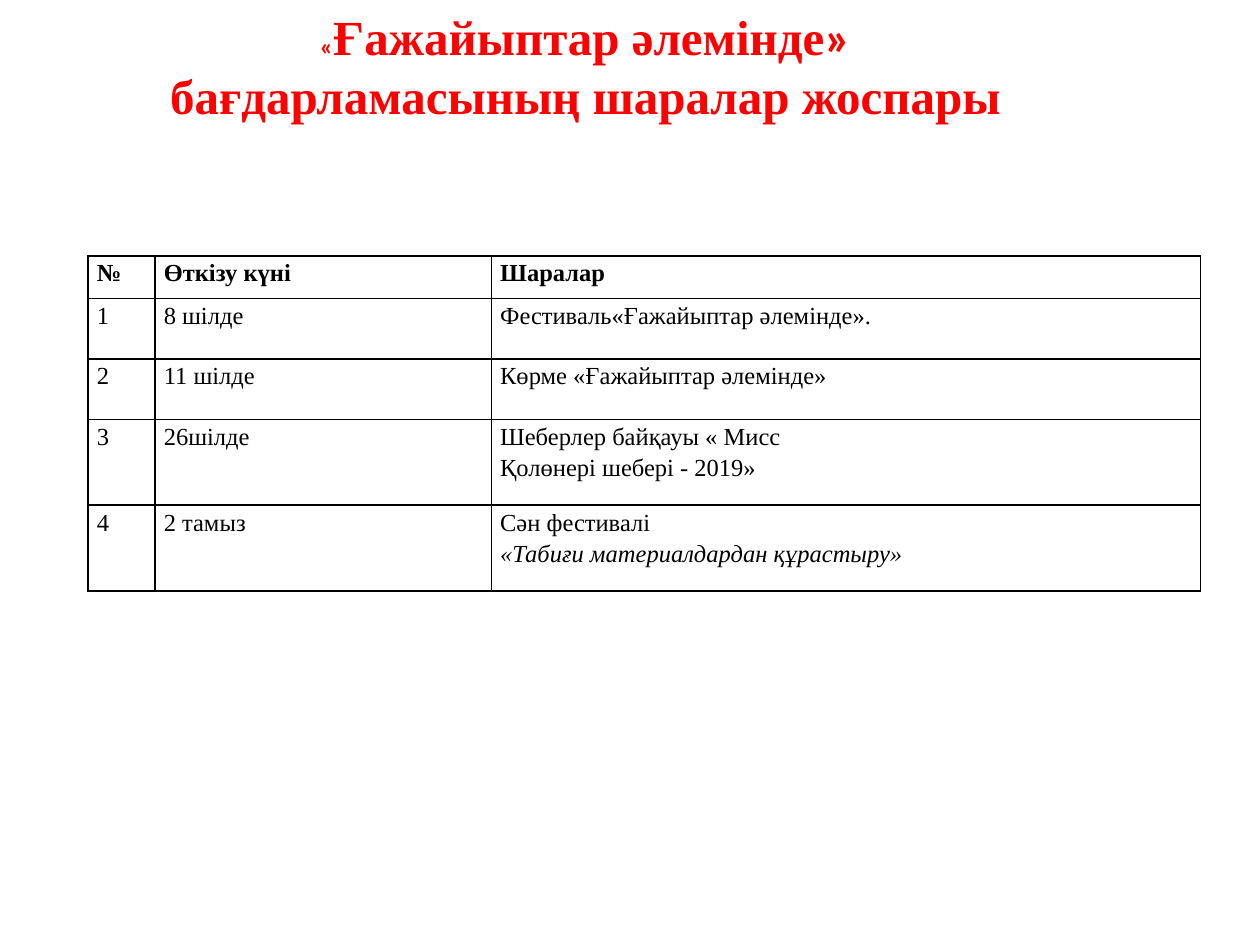
from lxml.etree import SubElement
from pptx import Presentation
from pptx.dml.color import RGBColor
from pptx.enum.text import MSO_ANCHOR, MSO_AUTO_SIZE, PP_ALIGN
from pptx.oxml.ns import qn
from pptx.util import Inches, Pt

RED = RGBColor(0xFF, 0x00, 0x00)
BLACK = RGBColor(0x00, 0x00, 0x00)
SERIF = "Times New Roman"
SANS = "Calibri"

TITLE_RUNS = [
    ("«", SANS, 14),
    ("Ғажайыптар әлемінде", SERIF, 28),
    ("»", SANS, 28),
    (" бағдарламасының шаралар жоспары", SERIF, 28),
]
PLAN = [
    ("№", "Өткізу күні", ["Шаралар"]),
    ("1", "8 шілде", ["Фестиваль«Ғажайыптар әлемінде»."]),
    ("2", "11 шілде", ["Көрме «Ғажайыптар әлемінде»"]),
    ("3", "26шілде", ["Шеберлер байқауы « Мисс", "Қолөнері шебері - 2019»"]),
    ("4", "2 тамыз", ["Сән фестивалі", "«Табиғи материалдардан құрастыру»"]),
]
ITALIC_LINE = "«Табиғи материалдардан құрастыру»"
COLUMN_WIDTHS = [0.53, 2.67, 5.63]
ROW_HEIGHTS = [0.34, 0.48, 0.48, 0.68, 0.68]


def add_text(paragraph, text, font=SERIF, size=14, color=BLACK, bold=False, italic=False):
    run = paragraph.add_run()
    run.text = text
    run.font.name = font
    run.font.size = Pt(size)
    run.font.color.rgb = color
    run.font.bold = bold
    run.font.italic = italic


def add_borders(cell):
    properties = cell._tc.get_or_add_tcPr()
    for position, side in enumerate(("lnL", "lnR", "lnT", "lnB")):
        line = SubElement(properties, qn(f"a:{side}"), w=str(Pt(1)))
        fill = SubElement(line, qn("a:solidFill"))
        SubElement(fill, qn("a:srgbClr"), val=str(BLACK))
        properties.insert(position, line)


def add_title(slide):
    title = slide.shapes.title
    title.left, title.top = Inches(1.17), Inches(0)
    title.width, title.height = Inches(6.95), Inches(1.65)
    frame = title.text_frame
    frame.word_wrap = True
    frame.auto_size = MSO_AUTO_SIZE.NONE
    frame.vertical_anchor = MSO_ANCHOR.TOP
    paragraph = frame.paragraphs[0]
    paragraph.alignment = PP_ALIGN.CENTER
    for text, font, size in TITLE_RUNS:
        add_text(paragraph, text, font=font, size=size, color=RED, bold=True)


def fill_cell(cell, lines, bold):
    cell.fill.background()
    add_borders(cell)
    cell.margin_left = cell.margin_right = Inches(0.07)
    cell.margin_top = cell.margin_bottom = Inches(0)
    frame = cell.text_frame
    for index, line in enumerate(lines):
        paragraph = frame.add_paragraph() if index else frame.paragraphs[0]
        paragraph.alignment = PP_ALIGN.JUSTIFY
        paragraph.line_spacing = 1.15
        add_text(paragraph, line, bold=bold, italic=line == ITALIC_LINE)


def add_plan(slide):
    table = slide.shapes.add_table(
        len(PLAN), len(COLUMN_WIDTHS), Inches(0.7), Inches(2.03),
        Inches(sum(COLUMN_WIDTHS)), Inches(sum(ROW_HEIGHTS)),
    ).table
    table.horz_banding = False
    for column, width in zip(table.columns, COLUMN_WIDTHS):
        column.width = Inches(width)
    for row, height, (number, date, events) in zip(table.rows, ROW_HEIGHTS, PLAN):
        row.height = Inches(height)
        for cell, lines in zip(row.cells, ([number], [date], events)):
            fill_cell(cell, lines, bold=number == "№")


def main():
    presentation = Presentation()
    presentation.slide_width = Inches(10)
    presentation.slide_height = Inches(7.5)
    slide = presentation.slides.add_slide(presentation.slide_layouts[5])
    add_plan(slide)
    add_title(slide)
    presentation.save("out.pptx")


if __name__ == "__main__":
    main()
